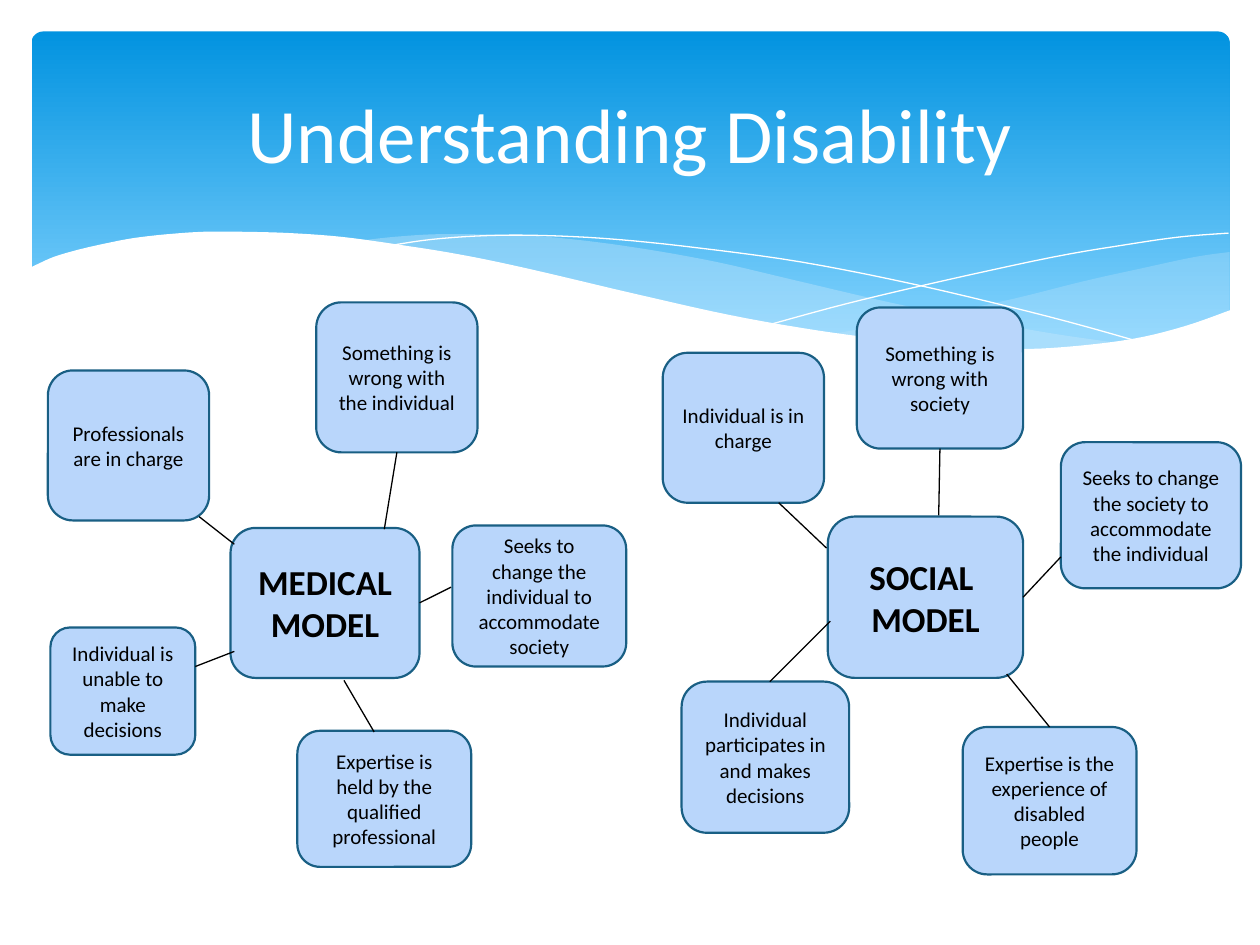
"""Build the slide that sets the medical model of disability beside the social model."""
from dataclasses import dataclass
from typing import Optional

from lxml import etree
from pptx import Presentation
from pptx.dml.color import RGBColor
from pptx.enum.shapes import MSO_CONNECTOR as Connector, MSO_SHAPE as Shape
from pptx.enum.text import MSO_ANCHOR as Anchor, PP_ALIGN as Align
from pptx.oxml.ns import qn
from pptx.util import Emu, Inches, Pt

COLOURS = {
    "sky": "0293E0", "horizon": "83D3FE", "mist": "C6E7FC", "white": "FFFFFF",
    "box": "B9D6FB", "border": "195F84", "ink": "000000",
}
FONT = "Calibri"
WIDTH, HEIGHT = Inches(10), Inches(7.5)
COLUMNS, ROWS = 100, 75
CURVE_STEPS = 5
TOP, BOTTOM, RIGHT = 0, 2, 3

Point = tuple[float, float]
Edge = tuple[Point, ...]


@dataclass(frozen=True)
class Wave:
    edges: tuple[Edge, ...]
    colour: str
    opacity: Optional[int] = None
    outlined: bool = False


@dataclass(frozen=True)
class Box:
    text: str
    left: float
    top: float
    width: float
    height: float
    rounding: float = 0.167
    size: int = 12
    bold: bool = False


@dataclass(frozen=True)
class Spoke:
    """A line from the hub to an aspect, with the sides it is joined to."""
    start: Point
    end: Point
    hub_side: Optional[int] = None
    aspect_side: Optional[int] = None


@dataclass(frozen=True)
class Model:
    hub: Box
    aspects: tuple[tuple[Box, Spoke], ...]


WAVES = (
    Wave((((97.6, 20), (94.8, 20.4), (90.6, 21.3), (86.1, 22.3), (80.5, 23.7),
           (75.3, 24.8), (70.6, 25.7), (66.1, 26.5)),
          ((66.1, 26.5), (70.5, 27.1), (74.5, 27.5), (78.1, 27.7), (81.4, 27.8),
           (85.4, 27.6), (88.9, 27.2), (92.1, 26.5), (94.9, 25.7), (97.6, 24.7))),
         "mist", 29),
    Wave((((89.3, 27.3), (83.7, 26.5), (77.5, 25.4), (70.6, 24), (62.9, 22.2),
           (56.9, 20.8), (51.4, 19.8), (46.4, 19.1), (42, 18.7), (38, 18.6),
           (34.4, 18.6), (31.3, 18.8), (28.6, 19.1)),
          ((28.6, 19.1), (34.2, 19.9), (40.4, 21.1), (44.9, 22.2), (53, 24),
           (60.1, 25.5), (66.5, 26.6), (72.2, 27.4), (77.3, 27.8), (81.8, 27.9),
           (85.7, 27.7), (89.3, 27.3))),
         "mist", 40),
    Wave((((30.9, 19.5), (34.3, 19), (38.7, 18.7), (43.3, 18.7), (48.9, 19),
           (55.6, 19.7), (63.6, 20.8), (72.7, 22.6), (83.1, 25.1), (90.7, 27.2)),),
         "white", outlined=True),
    Wave((((61.3, 25.7), (67.2, 24.1), (74.8, 22.3), (83.6, 20.4), (89.5, 19.4),
           (93.7, 18.8), (97.5, 18.5)),),
         "white", outlined=True),
    Wave((((97.7, 24.6), (94, 25.9), (89.9, 26.9), (85, 27.5), (80.9, 27.7),
           (76.1, 27.5), (70.8, 27), (64.7, 26.2), (57.9, 25), (50.3, 23.3),
           (41.8, 21.3), (36.5, 20.2), (31.5, 19.4), (27.1, 18.8), (23, 18.5),
           (19.3, 18.4), (16.1, 18.4), (13.2, 18.6), (10.6, 18.9), (8.5, 19.3),
           (6.7, 19.7), (5.2, 20.1), (4, 20.5), (2.3, 21.3)),
          ((2.3, 21.3), (2.3, 32.9)), ((2.3, 32.9), (97.7, 32.9))),
         "white"),
)

MODELS = (
    Model(Box("MEDICAL MODEL", 18.3, 41.9, 15, 11.9, size=20, bold=True), (
        (Box("Individual is unable to make decisions", 4, 49.8, 11.5, 10.1, 0.154),
         Spoke((18.6, 51.7), (15.5, 52.9))),
        (Box("Professionals are in charge", 3.8, 29.4, 12.8, 11.9),
         Spoke((18.6, 43.2), (15.8, 41))),
        (Box("Something is wrong with the individual", 25.1, 24, 12.8, 11.9),
         Spoke((30.5, 42), (31.5, 35.9), aspect_side=BOTTOM)),
        (Box("Expertise is held by the qualified professional", 23.6, 58, 13.8, 10.8),
         Spoke((27.3, 54), (29.7, 58.1))),
        (Box("Seeks to change the individual to accommodate society",
             35.9, 41.7, 13.8, 11.2),
         Spoke((33.3, 47.8), (35.8, 46.6), hub_side=RIGHT)),
    )),
    Model(Box("SOCIAL \vMODEL", 65.7, 41, 15.5, 12.8, size=20, bold=True), (
        (Box("Expertise is the experience of disabled people", 76.4, 57.7, 13.8, 11.7),
         Spoke((79.9, 53.5), (83.3, 57.7), aspect_side=TOP)),
        (Box("Seeks to change the society to accommodate the individual",
             84.2, 35.1, 14.3, 11.6),
         Spoke((81.1, 47.3), (84.2, 44.2), hub_side=RIGHT)),
        (Box("Individual participates in and makes decisions", 54.1, 54.1, 13.3, 12),
         Spoke((65.9, 49.3), (61.1, 54.1))),
        (Box("Something is wrong with society", 68, 24.4, 13.2, 11.2),
         Spoke((74.5, 40.9), (74.6, 35.6), aspect_side=BOTTOM)),
        (Box("Individual is in charge", 52.6, 28, 12.8, 11.9),
         Spoke((65.6, 43.5), (61.8, 39.9))),
    )),
)


def across(columns: float) -> Emu:
    return Emu(round(WIDTH * columns / COLUMNS))


def down(rows: float) -> Emu:
    return Emu(round(HEIGHT * rows / ROWS))


def rgb(name: str) -> RGBColor:
    return RGBColor.from_string(COLOURS[name])


def smooth_curve(edge: Edge) -> list[Point]:
    """Return points on a Catmull-Rom curve through the anchors of an edge."""
    anchors = (edge[0], *edge, edge[-1])
    points = [edge[0]]
    for a, b, c, d in zip(anchors, anchors[1:], anchors[2:], anchors[3:]):
        for step in range(1, CURVE_STEPS + 1):
            t = step / CURVE_STEPS
            points.append(tuple(
                q + (r - p) * t / 2 + (2 * p - 5 * q + 4 * r - s) * t ** 2 / 2
                + (3 * q - p - 3 * r + s) * t ** 3 / 2
                for p, q, r, s in zip(a, b, c, d)))
    return points


def draw_wave(shapes, wave: Wave) -> None:
    curve = [(across(x), down(y)) for edge in wave.edges for x, y in smooth_curve(edge)]
    builder = shapes.build_freeform(*curve[0])
    builder.add_line_segments(curve[1:], close=not wave.outlined)
    band = builder.convert_to_shape()
    band.shadow.inherit = False
    if wave.outlined:
        band.fill.background()
        band.line.color.rgb = rgb(wave.colour)
        band.line.width = Pt(0)
        return
    band.fill.solid()
    band.fill.fore_color.rgb = rgb(wave.colour)
    band.line.fill.background()
    if wave.opacity is not None:
        tint = next(band.element.spPr.iter(qn("a:srgbClr")))
        etree.SubElement(tint, qn("a:alpha"), val=str(wave.opacity * 1000))


def write(frame, text: str, size: int, colour: str, bold: bool = False) -> None:
    frame.word_wrap = True
    frame.vertical_anchor = Anchor.MIDDLE
    paragraph = frame.paragraphs[0]
    paragraph.text = text
    paragraph.alignment = Align.CENTER
    font = paragraph.font
    font.name, font.size, font.bold = FONT, Pt(size), bold
    font.color.rgb = rgb(colour)


def add_rounded(shapes, left: float, top: float, width: float, height: float,
                rounding: float):
    panel = shapes.add_shape(Shape.ROUNDED_RECTANGLE, across(left), down(top),
                             across(width), down(height))
    panel.adjustments[0] = rounding
    panel.shadow.inherit = False
    return panel


def draw_box(shapes, box: Box):
    panel = add_rounded(shapes, box.left, box.top, box.width, box.height, box.rounding)
    panel.fill.solid()
    panel.fill.fore_color.rgb = rgb("box")
    panel.line.color.rgb = rgb("border")
    panel.line.width = Pt(1.25)
    write(panel.text_frame, box.text, box.size, "ink", box.bold)
    return panel


def draw_spoke(shapes, spoke: Spoke, hub, aspect) -> None:
    (x1, y1), (x2, y2) = spoke.start, spoke.end
    link = shapes.add_connector(Connector.STRAIGHT, across(x1), down(y1),
                                across(x2), down(y2))
    link.line.color.rgb = rgb("ink")
    link.line.width = Pt(0.75)
    etree.SubElement(link.element.spPr, qn("a:effectLst"))
    if spoke.hub_side is not None:
        link.begin_connect(hub, spoke.hub_side)
    if spoke.aspect_side is not None:
        link.end_connect(aspect, spoke.aspect_side)


def draw_model(shapes, model: Model) -> None:
    members = shapes.add_group_shape().shapes
    hub = draw_box(members, model.hub)
    panels = [draw_box(members, box) for box, _ in model.aspects]
    for (_, spoke), aspect in zip(model.aspects, panels):
        draw_spoke(members, spoke, hub, aspect)


def draw_header(shapes) -> None:
    banner = add_rounded(shapes, 2.5, 2.5, 95.1, 27, 0.034)
    banner.line.fill.background()
    banner.fill.gradient()
    banner.fill.gradient_angle = 270
    for stop, (position, colour) in zip(banner.fill.gradient_stops,
                                        ((0, "sky"), (0.9, "horizon"))):
        stop.position = position
        stop.color.rgb = rgb(colour)
    for wave in WAVES:
        draw_wave(shapes, wave)
    title = shapes.add_textbox(across(5), down(3.7), across(90), down(13.7))
    write(title.text_frame, "Understanding Disability", 44, "white")


def main() -> None:
    deck = Presentation()
    deck.slide_width, deck.slide_height = WIDTH, HEIGHT
    slide = deck.slides.add_slide(deck.slide_layouts[6])
    draw_header(slide.shapes)
    for model in MODELS:
        draw_model(slide.shapes, model)
    deck.save("out.pptx")


if __name__ == "__main__":
    main()
